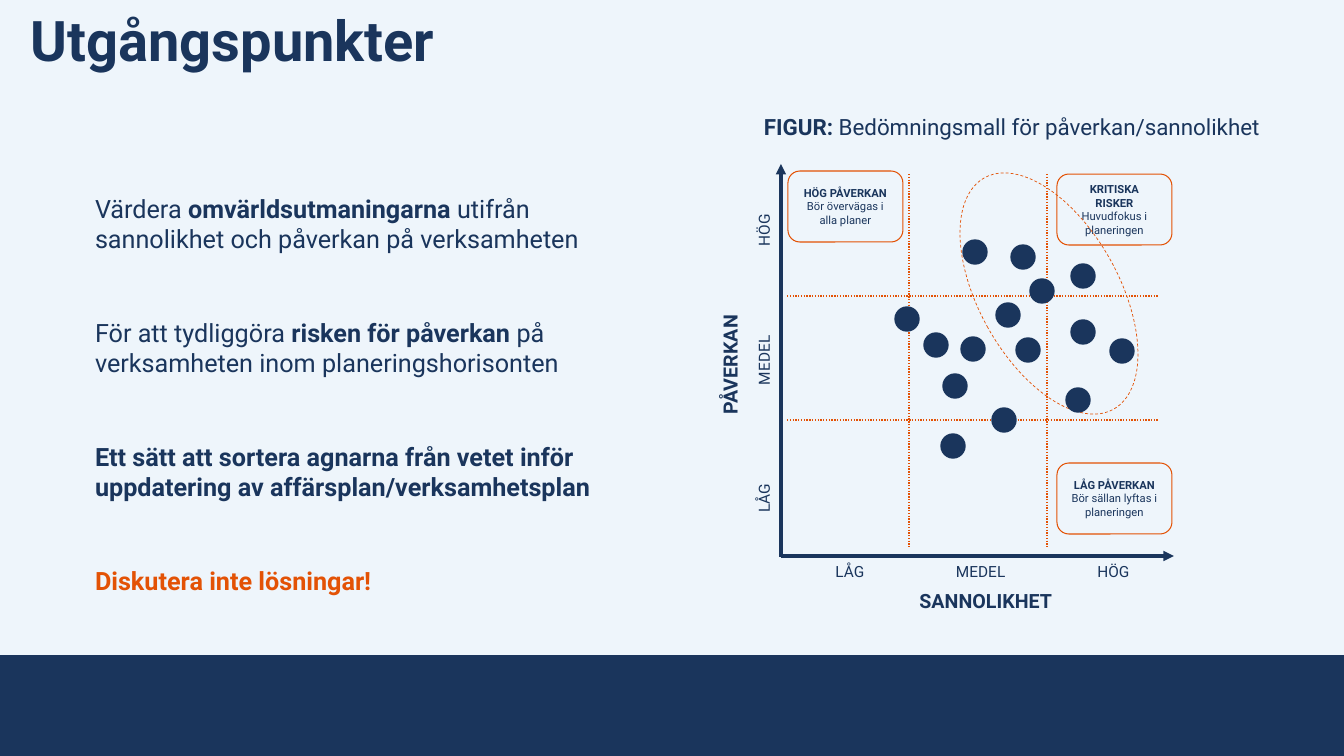
import dataclasses

import pptx
import pptx.dml.color
import pptx.enum.dml
import pptx.enum.shapes
import pptx.enum.text
import pptx.oxml
import pptx.oxml.ns
import pptx.util

SHAPE = pptx.enum.shapes.MSO_SHAPE
DASH = pptx.enum.dml.MSO_LINE
ALIGN = pptx.enum.text.PP_ALIGN
ANCHOR = pptx.enum.text.MSO_ANCHOR
SCALE = 12192000 / 1344  # EMU in one px


@dataclasses.dataclass(frozen=True)
class Theme:
    font: str = "Roboto"
    navy: str = "1A355C"
    orange: str = "E35205"
    pale: str = "EEF5FB"
    title: int = 40
    body: int = 18
    lead: int = 16
    axis: int = 14
    tick: int = 11
    note: int = 8


def emu(*sizes):
    return [round(size * SCALE) for size in sizes]


def rgb(code):
    return pptx.dml.color.RGBColor.from_string(code)


def tag(name):
    return f'a:{name} {pptx.oxml.ns.nsdecls("a")}'


def typeset(frame, paras, *, font, size, color, align=None, anchor=ANCHOR.TOP,
            inset=None, wrap=True, after=0, pitch=None, last=None):
    """Fill a frame; text between asterisks is bold, last colours the final paragraph."""
    frame.word_wrap = wrap
    frame.vertical_anchor = anchor
    if not wrap:
        frame.auto_size = pptx.enum.text.MSO_AUTO_SIZE.SHAPE_TO_FIT_TEXT
    if inset:
        (frame.margin_left, frame.margin_top,
         frame.margin_right, frame.margin_bottom) = emu(*inset)
    for i, text in enumerate(paras):
        para = frame.add_paragraph() if i else frame.paragraphs[0]
        para.alignment = align
        para.line_spacing = pitch
        para.space_after = pptx.util.Pt(after)
        final = last and i == len(paras) - 1
        for j, part in enumerate(text.split("*")):
            if part:
                run = para.add_run()
                run.text = part
                run.font.name = font
                run.font.size = pptx.util.Pt(size)
                run.font.bold = j % 2 == 1
                run.font.color.rgb = rgb(last if final else color)


class Board:
    def __init__(self, slide, theme):
        self.slide, self.theme = slide, theme
        slide.background.fill.solid()
        slide.background.fill.fore_color.rgb = rgb(theme.pale)

    def letter(self, frame, paras, **style):
        typeset(frame, paras, font=self.theme.font, color=self.theme.navy, **style)

    def text(self, left, top, width, height, *paras, turn=0, **style):
        box = self.slide.shapes.add_textbox(*emu(left, top, width, height))
        box.rotation = turn
        self.letter(box.text_frame, paras, **style)

    def label(self, x, y, width, height, text, **style):
        self.text(x - width / 2, y - height / 2, width, height, text,
                  wrap=False, **style)

    def stroke(self, line, color, weight, dash=None):
        line.color.rgb = rgb(color)
        line.width = pptx.util.Pt(weight)
        if dash:
            line.dash_style = dash

    def shape(self, kind, left, top, width, height, fill=None, line=None,
              weight=1, dash=None, turn=0):
        item = self.slide.shapes.add_shape(kind, *emu(left, top, width, height))
        item.shadow.inherit = False
        item.rotation = turn
        if fill:
            item.fill.solid()
            item.fill.fore_color.rgb = rgb(fill)
        else:
            item.fill.background()
        if line:
            self.stroke(item.line, line, weight, dash)
        else:
            item.line.fill.background()
        return item

    def card(self, left, top, *paras):
        item = self.shape(SHAPE.ROUNDED_RECTANGLE, left, top, 115, 71,
                          line=self.theme.orange, weight=0.75)
        self.letter(item.text_frame, paras, size=self.theme.note,
                    align=ALIGN.CENTER, anchor=ANCHOR.MIDDLE)

    def line(self, x1, y1, x2, y2, color, weight, dash=None, arrow=False):
        item = self.slide.shapes.add_connector(
            pptx.enum.shapes.MSO_CONNECTOR.STRAIGHT, *emu(x1, y1, x2, y2))
        self.stroke(item.line, color, weight, dash)
        props = item.element.spPr
        if arrow:
            props.get_or_add_ln().append(
                pptx.oxml.parse_xml(f'<{tag("tailEnd")} type="triangle"/>'))
        props.append(pptx.oxml.parse_xml(f'<{tag("effectLst")}/>'))

    def dot(self, x, y):
        self.shape(SHAPE.OVAL, x - 12, y - 12, 24, 24,
                   fill=self.theme.navy, line=self.theme.navy)


def main():
    deck = pptx.Presentation()
    deck.slide_width, deck.slide_height = emu(1344, 756)
    theme = Theme()
    board = Board(deck.slides.add_slide(deck.slide_layouts[6]), theme)

    # Band, title and body
    board.shape(SHAPE.RECTANGLE, 0, 655, 1344, 101, fill=theme.navy)
    board.text(31, 13, 1055, 61, "*Utgångspunkter*", size=theme.title,
               inset=(0, 0, 0, 0), pitch=0.9)
    board.text(
        95, 158, 538, 482,
        "Värdera *omvärldsutmaningarna* utifrån sannolikhet och påverkan på verksamheten",
        "För att tydliggöra *risken för påverkan* på verksamheten inom planeringshorisonten",
        "*Ett sätt att sortera agnarna från vetet inför uppdatering av affärsplan/verksamhetsplan*",
        "*Diskutera inte lösningar!*",
        size=theme.body, inset=(0, 35, 0, 0), after=45.5, last=theme.orange)

    # Axes with their names and levels
    board.line(781, 557, 781, 164, theme.navy, 2.5, arrow=True)
    board.line(781, 556, 1174, 556, theme.navy, 2.5, arrow=True)
    board.label(989, 601, 159, 34, "*SANNOLIKHET*", size=theme.axis)
    board.label(730, 361, 127, 34, "*PÅVERKAN*", size=theme.axis, turn=270)
    for text, width, x, y in (("LÅG", 49, 850, 498), ("MEDEL", 70, 981, 360),
                              ("HÖG", 53, 1114, 230)):
        board.label(x, 572, width, 29, text, size=theme.tick)
        board.label(764, y, width, 29, text, size=theme.tick, turn=270)

    # Caption and corner cards
    board.text(754, 108, 536, 37,
               "*FIGUR:* Bedömningsmall för påverkan/sannolikhet", size=theme.lead)
    board.card(788, 171, "*HÖG PÅVERKAN*", "Bör övervägas i alla planer")
    board.card(1057, 174, "*KRITISKA RISKER*", "Huvudfokus i planeringen")
    board.card(1057, 463, "*LÅG PÅVERKAN*", "Bör sällan lyftas i planeringen")

    # Grid
    for x in (909, 1047):
        board.line(x, 174, x, 547, theme.orange, 1, DASH.ROUND_DOT)
    for y in (296, 420):
        board.line(787, y, 1159, y, theme.orange, 1, DASH.ROUND_DOT)

    # Risks and the ring round the critical ones
    board.shape(SHAPE.OVAL, 979, 161, 140, 265, line=theme.orange,
                weight=0.5, dash=DASH.DASH, turn=330.8)
    for x, y in ((1008, 315), (1028, 350), (1122, 351), (907, 319), (955, 386),
                 (1042, 291), (1023, 257), (1083, 276), (975, 252), (973, 349),
                 (936, 345), (1078, 400), (1083, 332), (1004, 420), (953, 446)):
        board.dot(x, y)

    deck.save("out.pptx")


if __name__ == "__main__":
    main()
